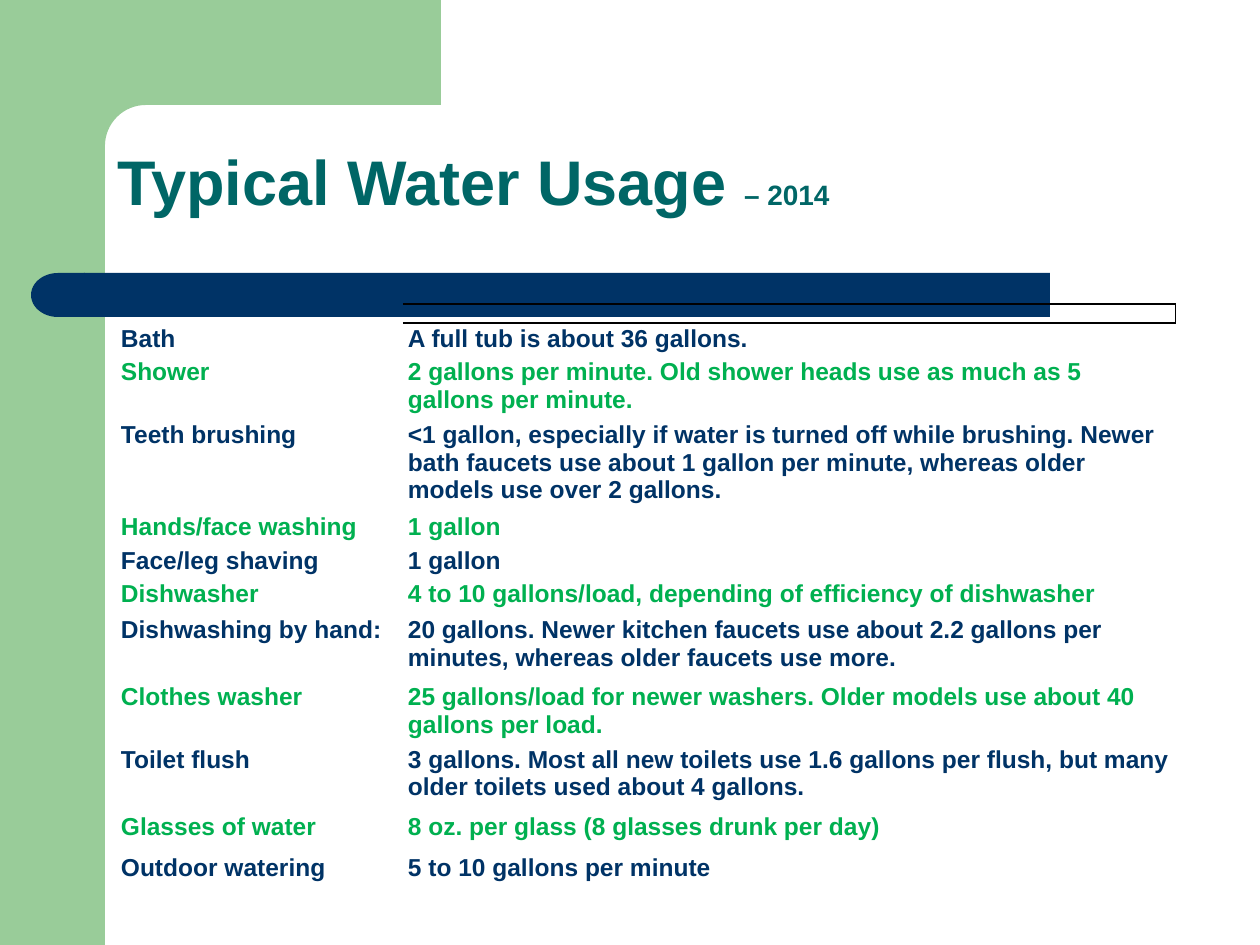
import math
from dataclasses import dataclass

import pptx
import pptx.dml.color
import pptx.enum.shapes
import pptx.enum.text
import pptx.oxml
import pptx.oxml.ns
import pptx.util

SCALE = 914400 // 126
SHAPE = pptx.enum.shapes.MSO_SHAPE


@dataclass(frozen=True)
class Theme:
    font: str = "Arial"
    sage: str = "99CC99"
    navy: str = "003366"
    teal: str = "006666"
    green: str = "00B050"
    border: str = "000000"
    title: int = 36
    year: int = 16
    body: int = 14
    spacer: int = 6


THEME = Theme()

# Activity, water use, row height in px
USAGE = [
    ("Bath", "A full tub is about 36 gallons.", 32),
    ("Shower", "2 gallons per minute. Old shower heads use as much as 5 gallons per minute.", 61),
    ("Teeth brushing", "<1 gallon, especially if water is turned off while brushing. Newer bath "
     "faucets use about 1 gallon per minute, whereas older models use over 2 gallons.", 88),
    ("Hands/face washing", "1 gallon", 32),
    ("Face/leg shaving", "1 gallon", 32),
    ("Dishwasher", "4 to 10 gallons/load, depending of efficiency of dishwasher", 36),
    ("Dishwashing by hand:", "20 gallons. Newer kitchen faucets use about 2.2 gallons per minutes, "
     "whereas older faucets use more.", 67),
    ("Clothes washer", "25 gallons/load for newer washers. Older models use about 40 gallons "
     "per load.", 60),
    ("Toilet flush", "3 gallons. Most all new toilets use 1.6 gallons per flush, but many older "
     "toilets used about 4 gallons.", 67),
    ("Glasses of water", "8 oz. per glass (8 glasses drunk per day)", 41),
    ("Outdoor watering", "5 to 10 gallons per minute", 32),
]
SPACER_HEIGHT = 19
COLUMN_WIDTHS = (287, 773)


def px(n):
    return pptx.util.Emu(round(n * SCALE))


def rgb(color):
    return pptx.dml.color.RGBColor.from_string(color)


def paint(sp, color):
    sp.shadow.inherit = False
    sp.fill.solid()
    sp.fill.fore_color.rgb = rgb(color)
    sp.line.fill.background()


def add_block(slide, kind, box, color):
    sp = slide.shapes.add_shape(kind, *map(px, box))
    paint(sp, color)
    return sp


def add_corner(slide):
    """Top band whose lower edge curves into the left band."""
    radius, steps = 41, 16
    angles = [math.pi / 2 * i / steps for i in range(steps + 1)]
    arc = [(146 - radius * math.sin(a), 146 - radius * math.cos(a)) for a in angles]
    points = [(441, 105), *arc, (105, 161), (63, 161), (63, 0)]
    builder = slide.shapes.build_freeform(px(441), 0)
    builder.add_line_segments([(px(x), px(y)) for x, y in points], close=True)
    paint(builder.convert_to_shape(), THEME.sage)


def add_run(p, text, size, color):
    r = p.add_run()
    r.text = text
    r.font.name = THEME.font
    r.font.size = pptx.util.Pt(size)
    r.font.bold = True
    r.font.color.rgb = rgb(color)


def add_title(slide):
    tf = slide.shapes.add_textbox(*map(px, (105, 105, 1092, 158))).text_frame
    tf.word_wrap = True
    tf.vertical_anchor = pptx.enum.text.MSO_ANCHOR.BOTTOM
    p = tf.paragraphs[0]
    p.line_spacing = 0.9
    add_run(p, "Typical Water Usage ", THEME.title, THEME.teal)
    add_run(p, "– 2014", THEME.year, THEME.teal)
    p.add_line_break()


def set_borders(cell, visible=()):
    """Draw the named sides (L, R, T, B) and hide the others."""
    tc_pr = cell._tc.get_or_add_tcPr()
    for i, side in enumerate("LRTB"):
        fill = "<a:noFill/>"
        if side in visible:
            fill = f'<a:solidFill><a:srgbClr val="{THEME.border}"/></a:solidFill>'
        ln = f'<a:ln{side} {pptx.oxml.ns.nsdecls("a")} w="9525">{fill}</a:ln{side}>'
        tc_pr.insert(i, pptx.oxml.parse_xml(ln))


def format_cell(cell, visible=()):
    cell.fill.background()
    cell.margin_left = cell.margin_right = px(5)
    cell.margin_top = cell.margin_bottom = px(2)
    set_borders(cell, visible)


def add_usage_table(slide):
    heights = [SPACER_HEIGHT] + [height for _, _, height in USAGE]
    frame = slide.shapes.add_table(len(heights), len(COLUMN_WIDTHS), px(116), px(304),
                                   px(sum(COLUMN_WIDTHS)), px(sum(heights)))
    table = frame.table
    table.first_row = table.horz_banding = False
    for column, width in zip(table.columns, COLUMN_WIDTHS):
        column.width = px(width)
    for row, height in zip(table.rows, heights):
        row.height = px(height)

    for c, sides in enumerate(("", "RTB")):
        cell = table.cell(0, c)
        format_cell(cell, sides)
        cell.text_frame.paragraphs[0].font.size = pptx.util.Pt(THEME.spacer)
    for i, (activity, use, _) in enumerate(USAGE):
        color = THEME.green if i % 2 else THEME.navy
        for c, text in enumerate((activity, use)):
            cell = table.cell(i + 1, c)
            # The first row shares its upper edge with the outlined spacer cell
            format_cell(cell, "T" if i == 0 and c == 1 else "")
            add_run(cell.text_frame.paragraphs[0], text, THEME.body, color)


def main():
    prs = pptx.Presentation()
    prs.slide_width, prs.slide_height = px(1260), px(945)
    slide = prs.slides.add_slide(prs.slide_layouts[6])
    add_block(slide, SHAPE.RECTANGLE, (0, 0, 105, 945), THEME.sage)
    add_corner(slide)
    add_block(slide, SHAPE.RECTANGLE, (84, 273, 966, 44), THEME.navy)
    cap = add_block(slide, SHAPE.FLOWCHART_DELAY, (31, 273, 54, 44), THEME.navy)
    cap.rotation = 180
    add_title(slide)
    add_usage_table(slide)
    prs.save("out.pptx")


if __name__ == "__main__":
    main()
